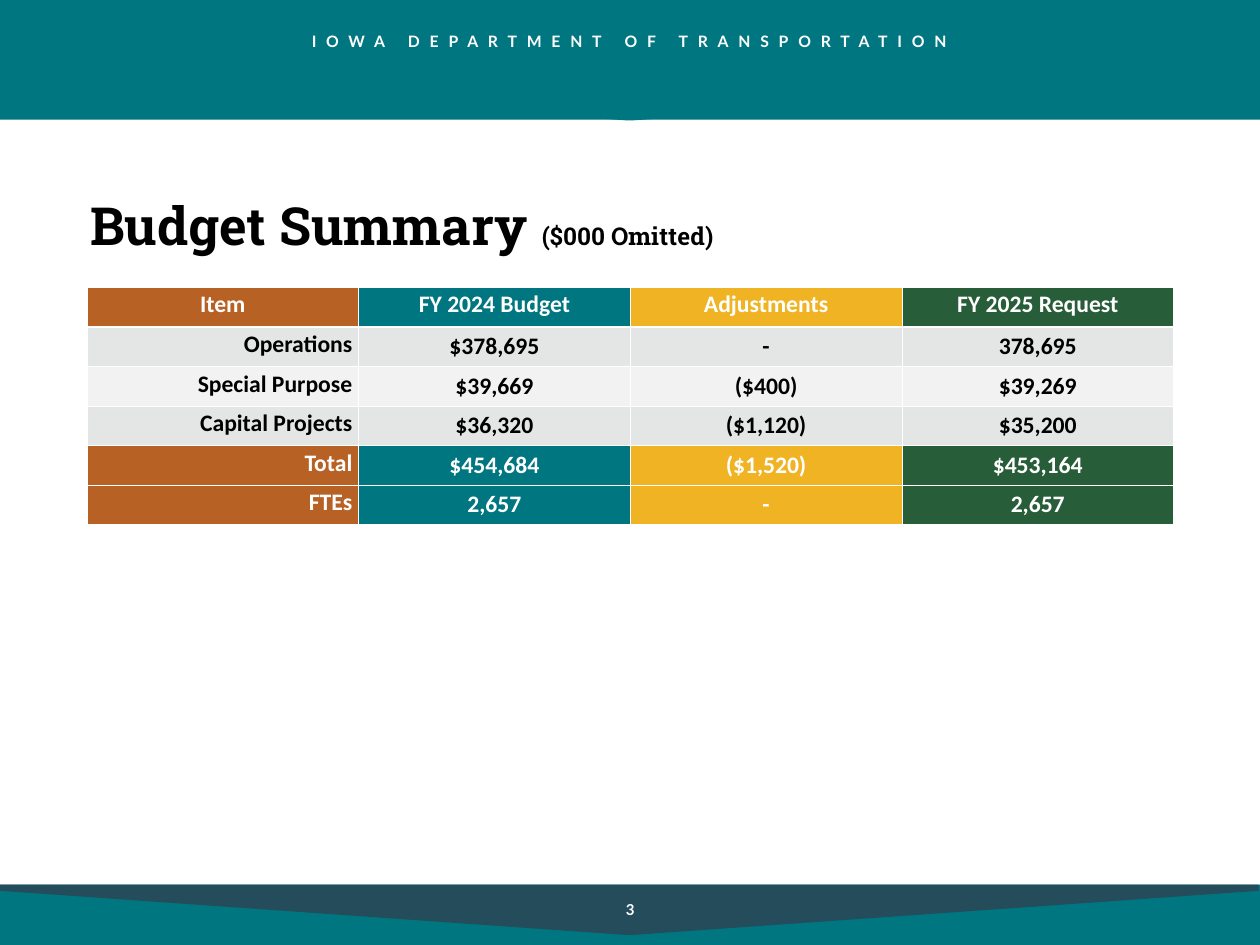
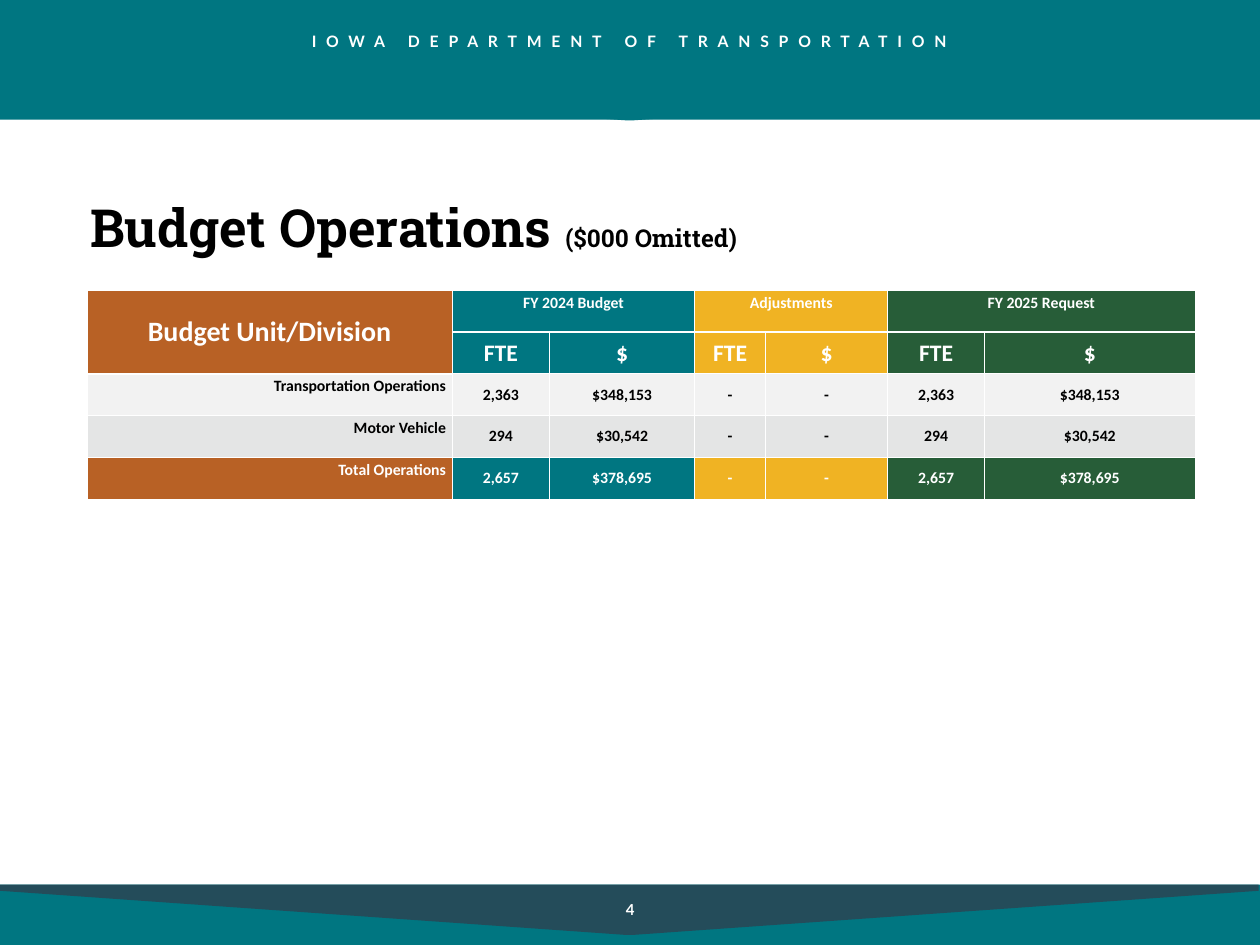
from dataclasses import dataclass

from lxml import etree
from pptx import Presentation
from pptx.dml.color import RGBColor
from pptx.enum.shapes import MSO_SHAPE
from pptx.enum.text import MSO_ANCHOR, PP_ALIGN
from pptx.oxml.ns import qn
from pptx.util import Inches, Pt

RECT = MSO_SHAPE.RECTANGLE
TOP, MIDDLE = MSO_ANCHOR.TOP, MSO_ANCHOR.MIDDLE
CENTER, LEFT, RIGHT = PP_ALIGN.CENTER, PP_ALIGN.LEFT, PP_ALIGN.RIGHT

HUES = {
    "teal": "007681",
    "slate": "244C5A",
    "rust": "B86125",
    "gold": "F0B323",
    "green": "275D38",
    "gray": "E4E5E5",
    "pale": "F2F2F2",
    "white": "FFFFFF",
    "black": "000000",
}
HEAD, BODY, TABLE = "Roboto Slab", "Lato", "Calibri"


@dataclass(frozen=True)
class Box:
    left: float
    top: float
    width: float
    height: float

    def emu(self) -> tuple:
        return tuple(map(Inches, (self.left, self.top, self.width, self.height)))


@dataclass(frozen=True)
class Grid:
    box: Box
    widths: list[float]
    hues: list[str]
    bands: dict[int, str]
    rows: list[list[str]]
    size: float
    sizes: dict[tuple[int, int], float]
    spans: list[tuple[int, int, int, int]]


@dataclass(frozen=True)
class Page:
    title: str
    box: Box
    number: int
    grid: Grid


def color(name: str) -> RGBColor:
    return RGBColor.from_string(HUES[name])


def style(run, font: str, size: float, hue: str) -> None:
    run.font.name = font
    run.font.size = Pt(size)
    run.font.bold = True
    run.font.color.rgb = color(hue)


def paint(shape, hue: str) -> None:
    shape.shadow.inherit = False
    shape.fill.solid()
    shape.fill.fore_color.rgb = color(hue)
    shape.line.fill.background()


def band(slide, box: Box, hue: str) -> None:
    paint(slide.shapes.add_shape(RECT, *box.emu()), hue)


def wedge(slide, box: Box, edge: float, hue: str) -> None:
    right, mid = box.left + box.width, box.left + box.width / 2
    side, low = box.top + edge, box.top + box.height
    points = [
        (right, box.top), (right, side), (mid + 0.06, low),
        (mid - 0.06, low), (box.left, side),
    ]
    path = slide.shapes.build_freeform(Inches(box.left), Inches(box.top))
    path.add_line_segments([(Inches(x), Inches(y)) for x, y in points])
    paint(path.convert_to_shape(), hue)


def label(slide, box: Box, text: str, size: float, anchor=TOP):
    frame = slide.shapes.add_textbox(*box.emu()).text_frame
    frame.word_wrap = True
    frame.vertical_anchor = anchor
    line = frame.paragraphs[0]
    line.text = text
    line.alignment = CENTER
    style(line.runs[0], BODY, size, "white")
    return line.runs[0]


def heading(slide, text: str, box: Box) -> None:
    frame = slide.shapes.add_textbox(*box.emu()).text_frame
    frame.word_wrap = True
    frame.vertical_anchor = MIDDLE
    frame.margin_left = Inches(0.05)
    line = frame.paragraphs[0]
    line.alignment = LEFT
    line.line_spacing = 0.9
    for part, size in ((text, 60), (" ", 65), ("($000 Omitted)", 28)):
        run = line.add_run()
        run.text = part
        style(run, HEAD, size, "black")


def border(cell, row: int) -> None:
    props = cell._tc.get_or_add_tcPr()
    thick = {"T": 3 if row == 1 else 1, "B": 3 if row == 0 else 1}
    for side in "LRTB":
        line = etree.SubElement(props, qn(f"a:ln{side}"), w=str(Pt(thick.get(side, 1))))
        fill = etree.SubElement(line, qn("a:solidFill"))
        etree.SubElement(fill, qn("a:srgbClr"), val=HUES["white"])


def draw(slide, grid: Grid) -> None:
    count = len(grid.rows)
    table = slide.shapes.add_table(count, len(grid.widths), *grid.box.emu()).table
    table.first_row = table.horz_banding = False
    for col, width in zip(table.columns, grid.widths):
        col.width = Inches(width)
    for row in table.rows:
        row.height = Inches(grid.box.height / count)
    for r, texts in enumerate(grid.rows):
        for c, text in enumerate(texts):
            cell = table.cell(r, c)
            border(cell, r)
            cell.fill.solid()
            cell.fill.fore_color.rgb = color(grid.bands.get(r, grid.hues[c]))
            if not text:
                continue
            cell.vertical_anchor = TOP if r == 0 or c == 0 else MIDDLE
            line = cell.text_frame.paragraphs[0]
            line.text = text
            line.alignment = RIGHT if c == 0 and r > 0 else CENTER
            size = grid.sizes.get((r, c), grid.size)
            style(line.runs[0], TABLE, size, "black" if r in grid.bands else "white")
    for top, left, low, right in grid.spans:
        first = table.cell(top, left)
        first.merge(table.cell(low, right))
        if low > top:
            first.vertical_anchor = MIDDLE


def build(deck, page: Page) -> None:
    slide = deck.slides.add_slide(deck.slide_layouts[6])
    band(slide, Box(0, 0, 20.02, 1.9), "teal")
    band(slide, Box(-0.02, 14.04, 20.02, 0.98), "teal")
    wedge(slide, Box(0, 14.04, 19.98, 0.8), 0.1, "slate")
    agency = label(slide, Box(0, 0.45, 19.98, 0.4), "IOWA DEPARTMENT OF TRANSPORTATION", 18)
    agency._r.get_or_add_rPr().set("spc", "1120")
    wedge(slide, Box(0, 1.13, 19.99, 0.78), 0.1, "teal")
    heading(slide, page.title, page.box)
    draw(slide, page.grid)
    label(slide, Box(8.85, 14.03, 2.31, 0.8), str(page.number), 17.2, MIDDLE)


SUMMARY = Grid(
    box=Box(1.38, 4.56, 17.25, 3.77),
    widths=[17.25 / 4] * 4,
    hues=["rust", "teal", "gold", "green"],
    bands={1: "gray", 2: "pale", 3: "gray"},
    rows=[
        ["Item", "FY 2024 Budget", "Adjustments", "FY 2025 Request"],
        ["Operations", "$378,695", "-", "378,695"],
        ["Special Purpose", "$39,669", "($400)", "$39,269"],
        ["Capital Projects", "$36,320", "($1,120)", "$35,200"],
        ["Total", "$454,684", "($1,520)", "$453,164"],
        ["FTEs", "2,657", "-", "2,657"],
    ],
    size=27,
    sizes={},
    spans=[],
)
UNITS = Grid(
    box=Box(1.38, 4.61, 17.59, 3.31),
    widths=[5.8, 1.54, 2.31, 1.12, 1.94, 1.54, 3.34],
    hues=["rust", "teal", "teal", "gold", "gold", "green", "green"],
    bands={2: "pale", 3: "gray"},
    rows=[
        ["Budget Unit/Division", "FY 2024 Budget", "", "Adjustments", "", "FY 2025 Request", ""],
        ["", "FTE", "$", "FTE", "$", "FTE", "$"],
        ["Transportation Operations", "2,363", "$348,153", "-", "-", "2,363", "$348,153"],
        ["Motor Vehicle", "294", "$30,542", "-", "-", "294", "$30,542"],
        ["Total Operations", "2,657", "$378,695", "-", "-", "2,657", "$378,695"],
    ],
    size=18,
    sizes={(0, 0): 32} | {(1, c): 27 for c in range(1, 7)},
    spans=[(0, 0, 1, 0)] + [(0, c, 0, c + 1) for c in (1, 3, 5)],
)
PAGES = [
    Page("Budget Summary", Box(1.38, 3.07, 17.27, 1.08), 3, SUMMARY),
    Page("Budget Operations", Box(1.38, 3.07, 17.25, 1.12), 4, UNITS),
]


def main() -> None:
    deck = Presentation()
    deck.slide_width, deck.slide_height = Inches(20), Inches(15)
    for page in PAGES:
        build(deck, page)
    deck.save("out.pptx")


if __name__ == "__main__":
    main()
